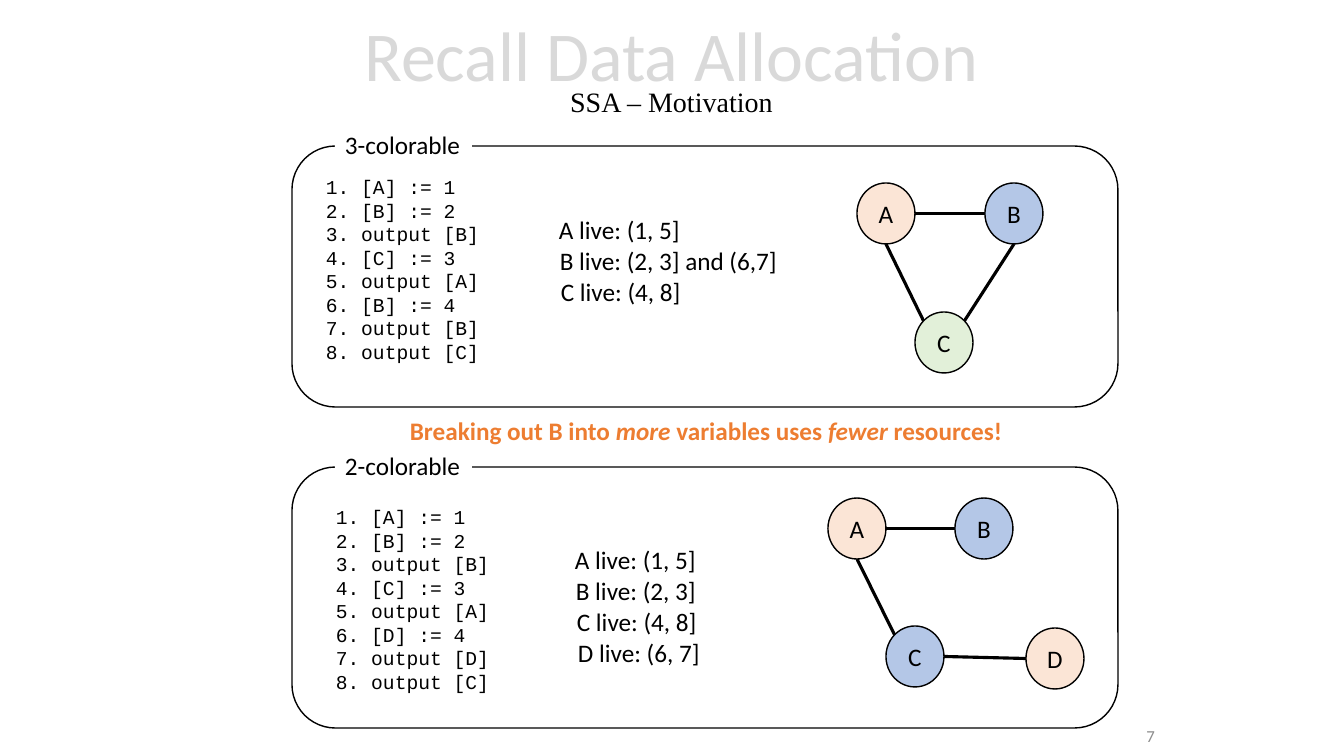
from lxml import etree
from pptx import Presentation
from pptx.dml.color import RGBColor
from pptx.enum.shapes import MSO_CONNECTOR, MSO_SHAPE
from pptx.enum.text import MSO_ANCHOR, MSO_AUTO_SIZE, PP_ALIGN
from pptx.oxml.ns import qn
from pptx.util import Pt

LEFT, CENTER, RIGHT = PP_ALIGN.LEFT, PP_ALIGN.CENTER, PP_ALIGN.RIGHT
MIDDLE = MSO_ANCHOR.MIDDLE
FIT = MSO_AUTO_SIZE.SHAPE_TO_FIT_TEXT
ROUND, RECT, OVAL = MSO_SHAPE.ROUNDED_RECTANGLE, MSO_SHAPE.RECTANGLE, MSO_SHAPE.OVAL
STRAIGHT = MSO_CONNECTOR.STRAIGHT

COLORS = {
    "black": "000000", "white": "FFFFFF", "title": "D9D9D9", "number": "8C8C8C",
    "accent": "ED7D31", "peach": "FBE5D6", "blue": "B4C7E7", "green": "E2F0D9",
}
TITLE, TOPIC = "Recall Data Allocation", "SSA – Motivation"
BANNER = [("Breaking out B into ", False), ("more ", True), ("variables uses ", False),
          ("fewer ", True), ("resources!", False)]
PANELS = [
    {
        "label": "3-colorable", "top": 146,
        "code": ["[A] := 1", "[B] := 2", "output [B]", "[C] := 3",
                 "output [A]", "[B] := 4", "output [B]", "output [C]"],
        "code_at": (316, 170),
        "live": [("A live: (1, 5]", 143), ("B live: (2, 3] and (6,7]", 240),
                 ("C live: (4, 8]", 142)],
        "live_at": (549, 209),
        "nodes": {"A": (857, 183, "peach"), "B": (985, 183, "blue"),
                  "C": (915, 312, "green")},
        "edges": [("A", "bottom", "C", "top left"), ("B", "bottom", "C", "top right"),
                  ("B", "left", "A", "right")],
    },
    {
        "label": "2-colorable", "top": 467,
        "code": ["[A] := 1", "[B] := 2", "output [B]", "[C] := 3",
                 "output [A]", "[D] := 4", "output [D]", "output [C]"],
        "code_at": (326, 500),
        "live": [("A live: (1, 5]", 143), ("B live: (2, 3]", 142),
                 ("C live: (4, 8]", 142), ("D live: (6, 7]", 144)],
        "live_at": (565, 539),
        "nodes": {"A": (828, 498, "peach"), "B": (955, 498, "blue"),
                  "C": (886, 626, "blue"), "D": (1026, 628, "peach")},
        "edges": [("A", "bottom", "C", "top left"), ("D", "left", "C", "right"),
                  ("B", "left", "A", "right")],
    },
]
NODE_W, NODE_H = 58, 61
# Where an edge meets a node, as shares of its width and height
SITES = {"left": (0, 0.5), "right": (1, 0.5), "bottom": (0.5, 1),
         "top left": (0.15, 0.15), "top right": (0.85, 0.15)}
PX = 914400 / 100.8


def px(*sizes):
    return [round(size * PX) for size in sizes]


def rgb(name):
    return RGBColor.from_string(COLORS[name])


def style(font, size, color="black", face="Calibri"):
    font.size, font.name = Pt(size), face
    font.color.rgb = rgb(color)


def write(shape, lines, size=18, color="black", face="Calibri", align=LEFT):
    frame = shape.text_frame
    frame.text = "\n".join(lines)
    for para in frame.paragraphs:
        para.alignment = align
        style(para.font, size, color, face)
    return frame


def add_text(box, lines, **look):
    """Add an unwrapped text box that fits its text."""
    frame = write(slide.shapes.add_textbox(*px(*box)), lines, **look)
    frame.word_wrap, frame.auto_size = False, FIT
    return frame


def add_shape(kind, box, fill=None, line=None):
    shape = slide.shapes.add_shape(kind, *px(*box))
    shape.shadow.inherit = False
    if fill:
        shape.fill.solid()
        shape.fill.fore_color.rgb = rgb(fill)
    else:
        shape.fill.background()
    if line:
        shape.line.color.rgb = rgb(line)
        shape.line.width = Pt(1)
    else:
        shape.line.fill.background()
    return shape


def add_edge(start, end):
    edge = slide.shapes.add_connector(STRAIGHT, *px(*start, *end))
    edge.line.color.rgb = rgb("black")
    edge.line.width = Pt(2.25)
    etree.SubElement(edge._element.spPr, qn("a:effectLst"))


def add_title():
    frame = slide.shapes.add_textbox(*px(237, 3, 869, 146)).text_frame
    frame.word_wrap, frame.vertical_anchor = True, MIDDLE
    para = frame.paragraphs[0]
    para.alignment, para.line_spacing = CENTER, 0.7
    head = para.add_run()
    head.text = TITLE
    style(head.font, 50, "title")
    para.add_line_break()
    topic = para.add_run()
    topic.text = TOPIC
    style(topic.font, 20, face="Times New Roman")


def add_graph(nodes, edges):
    def site(name, side):
        x, y, _ = nodes[name]
        across, down = SITES[side]
        return x + across * NODE_W, y + down * NODE_H

    for name, side, other, far in edges:
        add_edge(site(name, side), site(other, far))
    for name, (x, y, fill) in nodes.items():
        node = add_shape(OVAL, (x, y, NODE_W, NODE_H), fill, "black")
        write(node, [name], align=CENTER).vertical_anchor = MIDDLE


def add_panel(panel):
    code = [f"{num}. {line}" for num, line in enumerate(panel["code"], 1)]
    add_text((*panel["code_at"], 174, 201), code, size=14, face="Courier New")
    x, y = panel["live_at"]
    for i, (line, width) in enumerate(panel["live"]):
        add_text((x + i, y + 31 * i, width, 40), [line])
    add_graph(panel["nodes"], panel["edges"])
    add_shape(ROUND, (292, panel["top"], 826, 261), line="black")
    label = add_shape(RECT, (335, panel["top"] - 22, 137, 40), "white")
    frame = write(label, [panel["label"]])
    frame.word_wrap, frame.auto_size = False, FIT
    frame.vertical_anchor = MSO_ANCHOR.TOP


def add_banner():
    para = add_text((400, 410, 638, 40), [""], color="accent").paragraphs[0]
    para.font.bold = True
    for words, slant in BANNER:
        run = para.add_run()
        run.text, run.font.italic = words, slant


deck = Presentation()
deck.slide_width, deck.slide_height = px(1344, 756)
slide = deck.slides.add_slide(deck.slide_layouts[6])
add_title()
number = slide.shapes.add_textbox(*px(938, 716, 227, 40))
write(number, ["7"], size=12, color="number", align=RIGHT).vertical_anchor = MIDDLE
for panel in PANELS:
    add_panel(panel)
add_banner()
deck.save("out.pptx")
